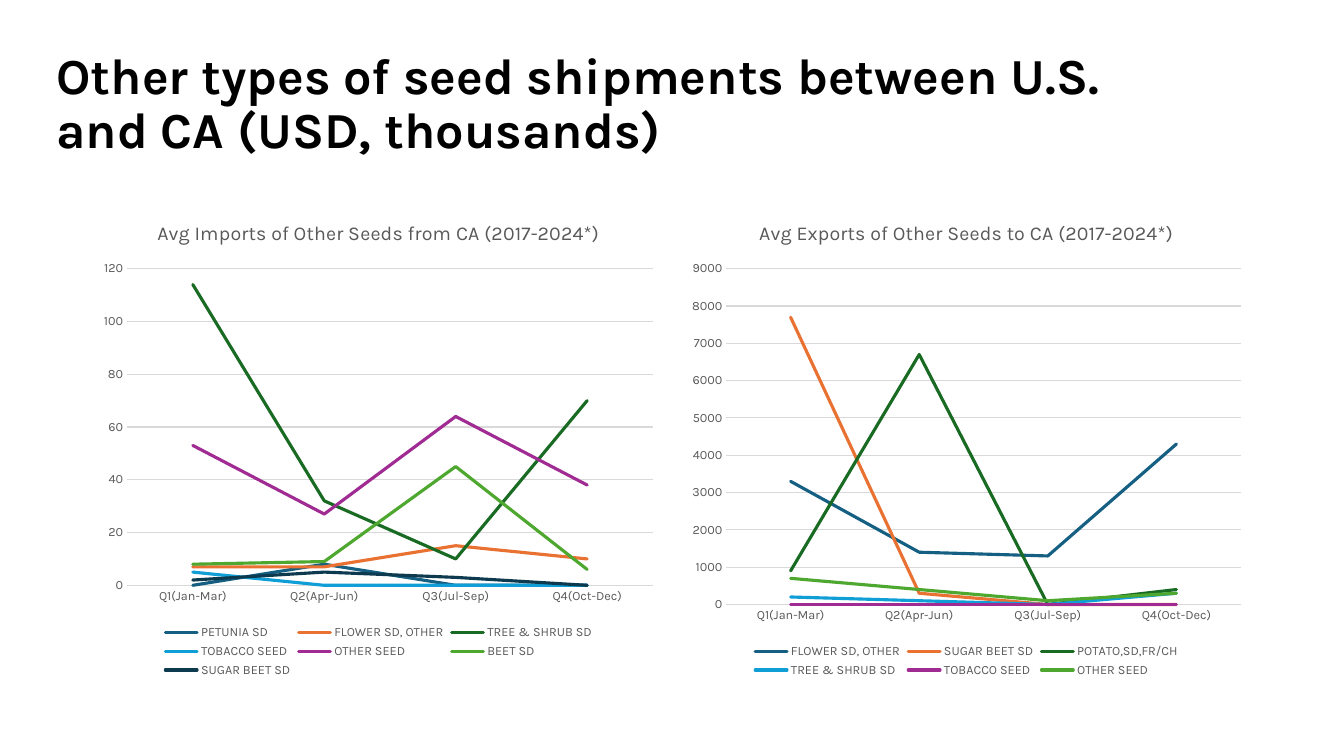
import pptx
import pptx.chart.data
import pptx.dml.color
import pptx.enum.chart
import pptx.enum.text
import pptx.oxml
import pptx.util
from pptx.util import Inches

FONT = "Karla"
GREY, GRID = "595959", "D9D9D9"
PALETTE = ["156082", "E97132", "196B24", "0F9ED5", "A02B93", "4EA72E", "0D3A4E"]
QUARTERS = ["Q1(Jan-Mar)", "Q2(Apr-Jun)", "Q3(Jul-Sep)", "Q4(Oct-Dec)"]
IMPORTS = {
    "PETUNIA SD": (0, 8, 0, 0),
    "FLOWER SD, OTHER": (7, 7, 15, 10),
    "TREE & SHRUB SD": (114, 32, 10, 70),
    "TOBACCO SEED": (5, 0, 0, 0),
    "OTHER SEED": (53, 27, 64, 38),
    "BEET SD": (8, 9, 45, 6),
    "SUGAR BEET SD": (2, 5, 3, 0),
}
EXPORTS = {
    "FLOWER SD, OTHER": (3300, 1400, 1300, 4300),
    "SUGAR BEET SD": (7700, 300, 0, 0),
    "POTATO,SD,FR/CH": (900, 6700, 0, 400),
    "TREE & SHRUB SD": (200, 100, 0, 300),
    "TOBACCO SEED": (0, 0, 0, 0),
    "OTHER SEED": (700, 400, 100, 300),
}


def rgb(value):
    return pptx.dml.color.RGBColor.from_string(value)


def set_attrs(obj, values):
    for name, value in values.items():
        setattr(obj, name, value)


def set_font(font, size, color, bold=False):
    set_attrs(font, {"name": FONT, "size": pptx.util.Pt(size), "bold": bold})
    font.color.rgb = rgb(color)


def set_line(line, color, width):
    line.color.rgb = rgb(color)
    line.width = pptx.util.Pt(width)


def set_plot_area(chart, box):
    values = "".join(f'<c:{tag} val="{value}"/>' for tag, value in zip("xywh", box))
    layout = pptx.oxml.parse_xml(
        '<c:layout xmlns:c="http://schemas.openxmlformats.org/drawingml/2006/chart">'
        '<c:manualLayout><c:layoutTarget val="inner"/><c:xMode val="edge"/>'
        f'<c:yMode val="edge"/>{values}</c:manualLayout></c:layout>')
    area = chart.plots[0]._element.getparent()
    for old in area.findall(layout.tag):
        area.remove(old)
    area.insert(0, layout)


def add_title(s, text, left, top, width, height):
    sp = s.shapes.title
    set_attrs(sp, {"left": Inches(left), "top": Inches(top),
                   "width": Inches(width), "height": Inches(height)})
    tf = sp.text_frame
    set_attrs(tf, {"word_wrap": True,
                   "auto_size": pptx.enum.text.MSO_AUTO_SIZE.NONE,
                   "vertical_anchor": pptx.enum.text.MSO_ANCHOR.MIDDLE})
    p = tf.paragraphs[0]
    set_attrs(p, {"alignment": pptx.enum.text.PP_ALIGN.LEFT, "line_spacing": 0.9})
    r = p.add_run()
    r.text = text
    set_font(r.font, 36, "000000", True)


def add_seed_chart(s, title, shipments, top_value, step, plot_box,
                   left, top, width, height):
    data = pptx.chart.data.CategoryChartData()
    data.categories = QUARTERS
    for name, values in shipments.items():
        data.add_series(name, values)
    chart = s.shapes.add_chart(
        pptx.enum.chart.XL_CHART_TYPE.LINE, Inches(left), Inches(top),
        Inches(width), Inches(height), data).chart
    set_font(chart.font, 10, "000000")
    chart.has_title = True
    p = chart.chart_title.text_frame.paragraphs[0]
    r = p.add_run()
    r.text = title
    set_font(r.font, 14, GREY)
    chart.chart_title.include_in_layout = False

    chart.has_legend = True
    set_attrs(chart.legend, {"position": pptx.enum.chart.XL_LEGEND_POSITION.BOTTOM,
                             "include_in_layout": False})
    set_font(chart.legend.font, 9, GREY)

    for axis in (chart.category_axis, chart.value_axis):
        set_attrs(axis, {"major_tick_mark": pptx.enum.chart.XL_TICK_MARK.NONE,
                         "minor_tick_mark": pptx.enum.chart.XL_TICK_MARK.NONE})
        set_font(axis.tick_labels.font, 9, GREY)
    set_line(chart.category_axis.format.line, GRID, 0.75)
    set_attrs(chart.value_axis, {"minimum_scale": 0, "maximum_scale": top_value,
                                 "major_unit": step, "has_major_gridlines": True})
    chart.value_axis.format.line.fill.background()
    set_line(chart.value_axis.major_gridlines.format.line, GRID, 0.75)

    plot = chart.plots[0]
    plot.vary_by_categories = False
    for series, color in zip(plot.series, PALETTE):
        series.smooth = False
        series.marker.style = pptx.enum.chart.XL_MARKER_STYLE.NONE
        set_line(series.format.line, color, 2.25)
        series.format.line._ln.set("cap", "rnd")
    set_plot_area(chart, plot_box)


def main():
    prs = pptx.Presentation()
    set_attrs(prs, {"slide_width": Inches(13.33), "slide_height": Inches(7.5)})
    s = prs.slides.add_slide(prs.slide_layouts[5])
    add_title(s, "Other types of seed shipments between U.S. and CA (USD, thousands)",
              0.46, 0.32, 11.5, 1.45)
    charts = [
        ("Avg Imports of Other Seeds from CA (2017-2024*)", IMPORTS, 120, 20,
         (0.06, 0.14, 0.92, 0.66)),
        ("Avg Exports of Other Seeds to CA (2017-2024*)", EXPORTS, 9000, 1000,
         (0.08, 0.14, 0.9, 0.7)),
    ]
    for i, chart in enumerate(charts):
        add_seed_chart(s, *chart, 0.92 + i * 5.83, 2, 5.67, 4.76)
    prs.save("out.pptx")


if __name__ == "__main__":
    main()
